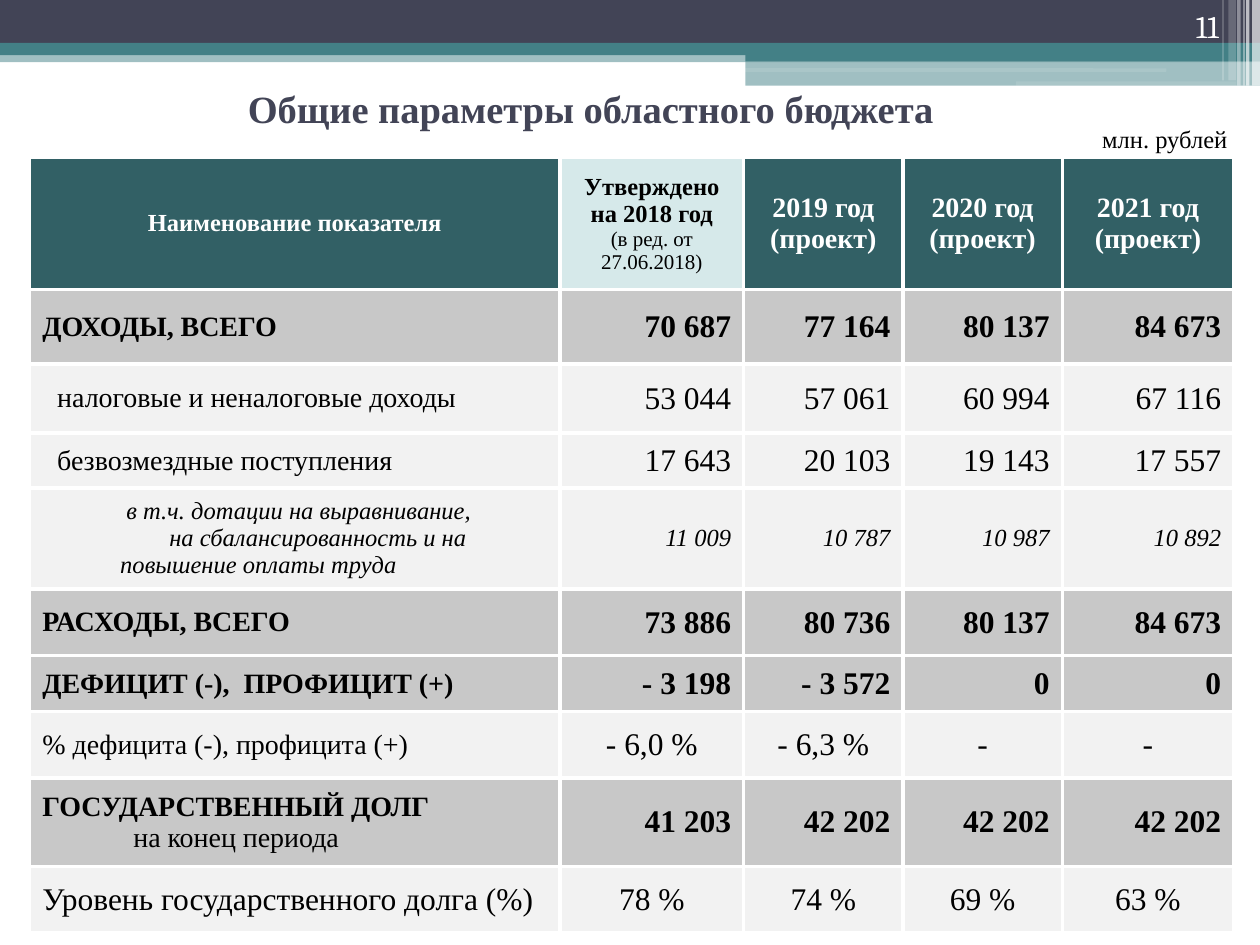
import pptx
import pptx.dml.color
import pptx.enum.shapes
import pptx.enum.text
import pptx.oxml.ns
import pptx.util
from lxml import etree

Pt = pptx.util.Pt
SHAPE = pptx.enum.shapes.MSO_SHAPE
ALIGN = pptx.enum.text.PP_ALIGN
ANCHOR = pptx.enum.text.MSO_ANCHOR
qn = pptx.oxml.ns.qn

COLORS = {
    "navy": "424456", "teal": "438086", "white": "FFFFFF", "black": "000000",
    "header": "326065", "approved": "D6E9EA", "total": "C8C8C8", "detail": "F2F2F2",
}
SERIF = "Times New Roman"


def color(name):
    return pptx.dml.color.RGBColor.from_string(COLORS[name])


def write(frame, lines, align, ink, font=SERIF):
    """Fill a text frame; each line is (text, size, style letters, left indent)."""
    frame.word_wrap = True
    for index, (text, size, style, indent) in enumerate(lines):
        para = frame.paragraphs[0] if index == 0 else frame.add_paragraph()
        para.text = text
        para.alignment = align
        para.font.name = font
        para.font.size = Pt(size)
        para.font.bold = "b" in style
        para.font.italic = "i" in style
        para.font.color.rgb = color(ink)
        if indent:
            para._p.get_or_add_pPr().set("marL", str(Pt(indent)))


deck = pptx.Presentation()
deck.slide_width, deck.slide_height = Pt(720), Pt(540)
page = deck.slides.add_slide(deck.slide_layouts[6])

# Banner: left, top, width, height, colour, opacity in percent
bands = [
    (0, 29, 720, 6.5, "teal", 50),
    (0, 0, 720, 24.5, "navy", 100),
    (0, 24.5, 720, 7, "teal", 100),
    (426, 28, 294, 7, "teal", 100),
    (426, 35, 294, 14, "teal", 50),
    (425.5, 39, 241, 2, "white", 11),
    (580.5, 46.5, 126, 2.5, "white", 11),
    (715.5, 0, 4.5, 49, "white", 65),
    (712, 0, 2, 49, "white", 65),
    (710.5, 0, 0.7, 49, "white", 60),
    (707, 0, 2, 49, "white", 40),
    (702, 0, 4.3, 46, "white", 20),
    (698.5, 0, 0.7, 46, "white", 30),
]
for left, top, width, height, fill, opacity in bands:
    rounded = opacity == 11
    kind = SHAPE.ROUNDED_RECTANGLE if rounded else SHAPE.RECTANGLE
    band = page.shapes.add_shape(kind, Pt(left), Pt(top), Pt(width), Pt(height))
    band.shadow.inherit = False
    band.line.fill.background()
    band.fill.solid()
    band.fill.fore_color.rgb = color(fill)
    if opacity < 100:
        tint = band.fill._xPr.find(".//" + qn("a:srgbClr"))
        etree.SubElement(tint, qn("a:alpha"), val=str(opacity * 1000))

# Captions: left, top, width, height, text, size, style, alignment, anchor, colour, font
captions = [
    (643.5, 0, 60, 29, "11", 18, "", ALIGN.RIGHT, ANCHOR.BOTTOM, "white", "Cambria"),
    (48, 44.5, 579, 34, "Общие параметры областного бюджета", 22, "b",
     ALIGN.CENTER, ANCHOR.MIDDLE, "navy", SERIF),
    (602, 67.5, 106.5, 24.5, "млн. рублей", 14, "",
     ALIGN.RIGHT, ANCHOR.TOP, "black", SERIF),
]
for left, top, width, height, text, size, style, align, anchor, ink, font in captions:
    box = page.shapes.add_textbox(Pt(left), Pt(top), Pt(width), Pt(height))
    box.text_frame.vertical_anchor = anchor
    write(box.text_frame, [(text, size, style, 0)], align, ink, font)

# Rows: height, fill, label lines, values, value size, value style, value alignment
rows = [
    (42.5, "total", [("ДОХОДЫ, ВСЕГО", 16, "b", 0)],
     ["70 687", "77 164", "80 137", "84 673"], 18, "b", ALIGN.RIGHT),
    (39.5, "detail", [("налоговые и неналоговые доходы", 16, "", 8.5)],
     ["53 044", "57 061", "60 994", "67 116"], 18, "", ALIGN.RIGHT),
    (31.5, "detail", [("безвозмездные поступления", 16, "", 8.5)],
     ["17 643", "20 103", "19 143", "17 557"], 18, "", ALIGN.RIGHT),
    (53.5, "detail", [("в т.ч. дотации на выравнивание,", 14, "i", 48),
                      ("на сбалансированность и на", 14, "i", 72.5),
                      ("повышение оплаты труда", 14, "i", 44.5)],
     ["11 009", "10 787", "10 987", "10 892"], 14, "i", ALIGN.RIGHT),
    (38, "total", [("РАСХОДЫ, ВСЕГО", 16, "b", 0)],
     ["73 886", "80 736", "80 137", "84 673"], 18, "b", ALIGN.RIGHT),
    (32, "total", [("ДЕФИЦИТ (-),  ПРОФИЦИТ (+)", 16, "b", 0)],
     ["- 3 198", "- 3 572", "0", "0"], 18, "b", ALIGN.RIGHT),
    (38, "detail", [("% дефицита (-), профицита (+)", 16, "", 0)],
     ["- 6,0 %", "- 6,3 %", "-", "-"], 18, "", ALIGN.CENTER),
    (50.5, "total", [("ГОСУДАРСТВЕННЫЙ ДОЛГ", 16, "b", 0), ("на конец периода", 16, "", 52)],
     ["41 203", "42 202", "42 202", "42 202"], 18, "b", ALIGN.RIGHT),
    (38, "detail", [("Уровень государственного долга (%)", 18, "", 0)],
     ["78 %", "74 %", "69 %", "63 %"], 18, "", ALIGN.CENTER),
]
column_widths = [303, 105, 91, 91, 98]
row_heights = [75.5] + [row[0] for row in rows]
budget = page.shapes.add_table(
    len(row_heights), len(column_widths), Pt(17), Pt(90),
    Pt(sum(column_widths)), Pt(sum(row_heights))).table
for column, width in zip(budget.columns, column_widths):
    column.width = Pt(width)
for table_row, height in zip(budget.rows, row_heights):
    table_row.height = Pt(height)

headings = [
    [("Наименование показателя", 14, "b", 0)],
    [("Утверждено на 2018 год", 14, "b", 0), ("(в ред. от 27.06.2018)", 12, "", 0)],
]
for year in (2019, 2020, 2021):
    headings.append([(f"{year} год", 16, "b", 0), ("(проект)", 16, "b", 0)])
for column, lines in enumerate(headings):
    approved = column == 1
    cell = budget.cell(0, column)
    cell.fill.solid()
    cell.fill.fore_color.rgb = color("approved" if approved else "header")
    write(cell.text_frame, lines, ALIGN.CENTER, "black" if approved else "white")

for index, (_, fill, label, values, size, style, align) in enumerate(rows, start=1):
    contents = [label] + [[(value, size, style, 0)] for value in values]
    for column, lines in enumerate(contents):
        cell = budget.cell(index, column)
        cell.fill.solid()
        cell.fill.fore_color.rgb = color(fill)
        write(cell.text_frame, lines, align if column else ALIGN.LEFT, "black")

for cell in budget.iter_cells():
    cell.vertical_anchor = ANCHOR.MIDDLE
    properties = cell._tc.get_or_add_tcPr()
    for position, side in enumerate(("lnL", "lnR", "lnT", "lnB")):
        border = etree.Element(qn("a:" + side), w=str(Pt(2.25)))
        paint = etree.SubElement(border, qn("a:solidFill"))
        etree.SubElement(paint, qn("a:srgbClr"), val=COLORS["white"])
        properties.insert(position, border)

deck.save("out.pptx")
